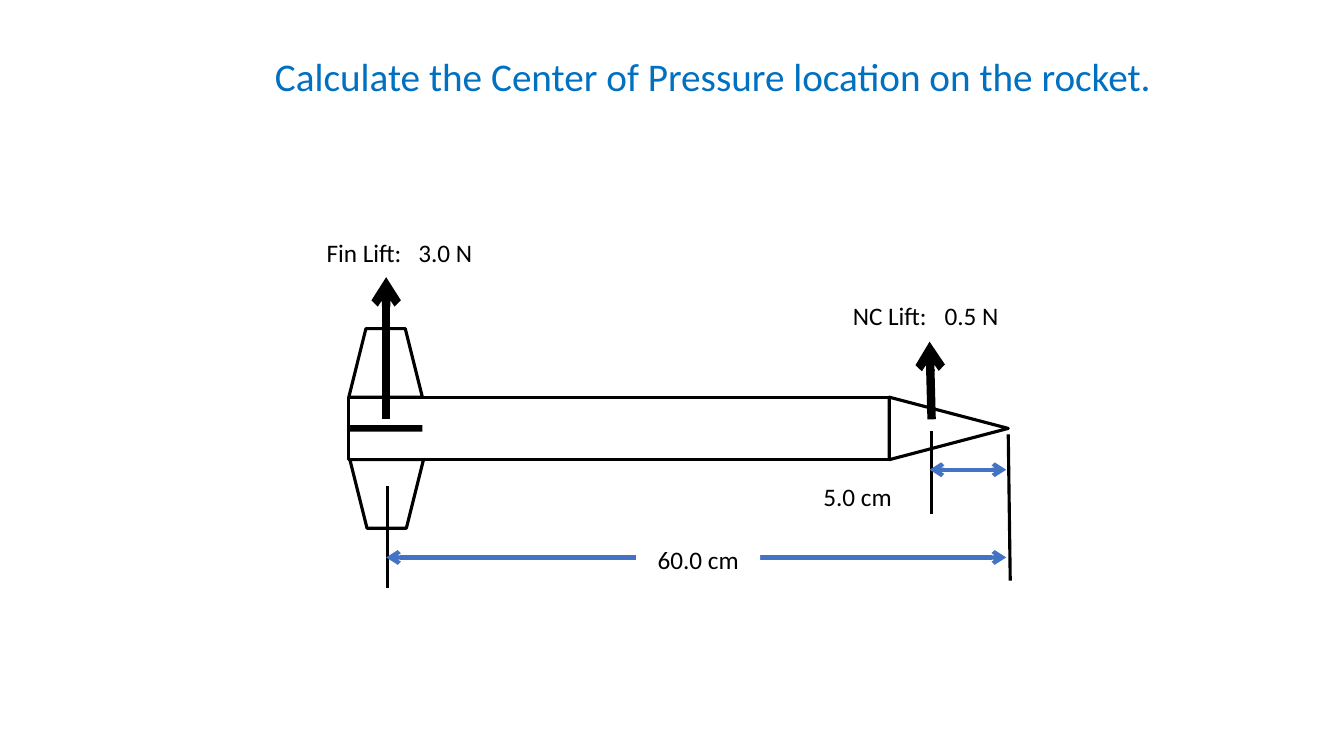
from collections import namedtuple

from lxml import etree
from pptx import Presentation
from pptx.dml.color import RGBColor
from pptx.enum.shapes import MSO_CONNECTOR, MSO_SHAPE
from pptx.enum.text import MSO_ANCHOR, PP_ALIGN
from pptx.oxml.ns import qn
from pptx.util import Inches, Pt

BLACK = RGBColor(0x00, 0x00, 0x00)
WHITE = RGBColor(0xFF, 0xFF, 0xFF)
TITLE_BLUE = RGBColor(0x00, 0x70, 0xC0)
DIMENSION_BLUE = RGBColor(0x44, 0x72, 0xC4)
FONT = "Calibri"
STRAIGHT = MSO_CONNECTOR.STRAIGHT
RECTANGLE = MSO_SHAPE.RECTANGLE
TRIANGLE = MSO_SHAPE.ISOSCELES_TRIANGLE
TRAPEZOID = MSO_SHAPE.TRAPEZOID
LEFT, CENTER, RIGHT = PP_ALIGN.LEFT, PP_ALIGN.CENTER, PP_ALIGN.RIGHT
MIDDLE = MSO_ANCHOR.MIDDLE
LEFT_SIDE = 1

Box = namedtuple("Box", "left top width height")


def inches(*lengths):
    return [Inches(length) for length in lengths]


def add_text(shapes, box, text, size=18, color=BLACK, align=LEFT, fill=None, tab=None):
    label = shapes.add_textbox(*inches(*box))
    if fill is not None:
        label.fill.solid()
        label.fill.fore_color.rgb = fill
    frame = label.text_frame
    frame.word_wrap = True
    frame.vertical_anchor = MIDDLE
    paragraph = frame.paragraphs[0]
    paragraph.alignment = align
    run = paragraph.add_run()
    run.text = text
    run.font.name = FONT
    run.font.size = Pt(size)
    run.font.color.rgb = color
    if tab:
        stops = etree.SubElement(paragraph._p.get_or_add_pPr(), qn("a:tabLst"))
        etree.SubElement(stops, qn("a:tab"), pos=str(Inches(tab)), algn="l")


def add_outline(shapes, preset, box, rotation=0):
    outline = shapes.add_shape(preset, *inches(*box))
    outline.shadow.inherit = False
    outline.fill.background()
    outline.line.color.rgb = BLACK
    outline.line.width = Pt(2.25)
    outline.rotation = rotation
    return outline


def add_line(shapes, start, end, width=2.25, color=BLACK, arrows=()):
    line = shapes.add_connector(STRAIGHT, *inches(*start, *end))
    line.line.color.rgb = color
    line.line.width = Pt(width)
    for arrow in arrows:
        etree.SubElement(line.line._get_or_add_ln(), qn(f"a:{arrow}"), type="arrow")
    etree.SubElement(line._element.spPr, qn("a:effectLst"))
    return line


def add_title(shapes, box):
    add_text(shapes, box, "Calculate the Center of Pressure location on the rocket.",
             size=28, color=TITLE_BLUE, align=RIGHT)


def add_rocket(shapes, box):
    left, top, width, height = box
    nose_length, fin_chord, fin_span = 1.18, 0.73, 0.68
    diameter = height - 2 * fin_span
    body_length = width - nose_length
    axis = top + height / 2
    body_top = top + fin_span
    nose_center = left + body_length + nose_length / 2

    body = add_outline(shapes, RECTANGLE, (left, body_top, body_length, diameter))
    add_outline(shapes, TRIANGLE, (nose_center - diameter / 2, axis - nose_length / 2,
                                   diameter, nose_length), rotation=90)
    add_outline(shapes, TRAPEZOID, (left, top, fin_chord, fin_span))
    add_outline(shapes, TRAPEZOID, (left + 0.01, body_top + diameter, fin_chord, fin_span),
                rotation=180)
    side_fin = add_line(shapes, (left, axis), (left + fin_chord, axis), width=4.5)
    side_fin.begin_connect(body, LEFT_SIDE)


def add_lifts(shapes, box):
    left, top, width, height = box
    lift_base = top + 0.9
    lifts = [
        ("Fin Lift:\t3.0 N", (left - 0.32, top - 0.96, 2.11, 0.4), 0.37, 0.37, -0.51),
        ("NC Lift:\t0.5 N", (left + 4.9, top - 0.33, 1.76, 0.4), 5.78, 5.76, 0.13),
    ]
    for text, label_box, base_x, tip_x, tip_y in lifts:
        add_line(shapes, (left + base_x, lift_base), (left + tip_x, top + tip_y),
                 width=6, arrows=["tailEnd"])
        add_text(shapes, label_box, text, tab=0.91)


def add_dimensions(shapes, box):
    left, top, width, height = box
    nose_tip = left + width
    add_line(shapes, (nose_tip + 0.02, top + 2.5), (nose_tip, top + 1.05))
    distances = [
        ("60.0 cm", 0.38, 0.37, 1.56, 2.57, 2.27, (2.85, 2.09)),
        ("5.0 cm", 5.78, 5.76, 1.02, 1.84, 1.4, (4.43, 1.47)),
    ]
    for text, mark_x, arrow_x, mark_top, mark_bottom, arrow_y, label in distances:
        add_line(shapes, (left + mark_x, top + mark_bottom), (left + mark_x, top + mark_top))
        add_line(shapes, (nose_tip - 0.02, top + arrow_y), (left + arrow_x, top + arrow_y),
                 width=3, color=DIMENSION_BLUE, arrows=["headEnd", "tailEnd"])
        label_x, label_y = label
        add_text(shapes, (left + label_x, top + label_y, 1.23, 0.4), text,
                 align=CENTER, fill=WHITE)


def main():
    presentation = Presentation()
    presentation.slide_width, presentation.slide_height = inches(13.33, 7.5)
    slide = presentation.slides.add_slide(presentation.slide_layouts[6])
    add_title(slide.shapes, Box(0.78, 0.47, 10.73, 0.57))

    diagram = slide.shapes.add_group_shape().shapes
    rocket_box = Box(3.46, 3.26, 6.54, 1.98)
    for add_part in (add_rocket, add_lifts, add_dimensions):
        add_part(diagram, rocket_box)

    presentation.save("out.pptx")


if __name__ == "__main__":
    main()
